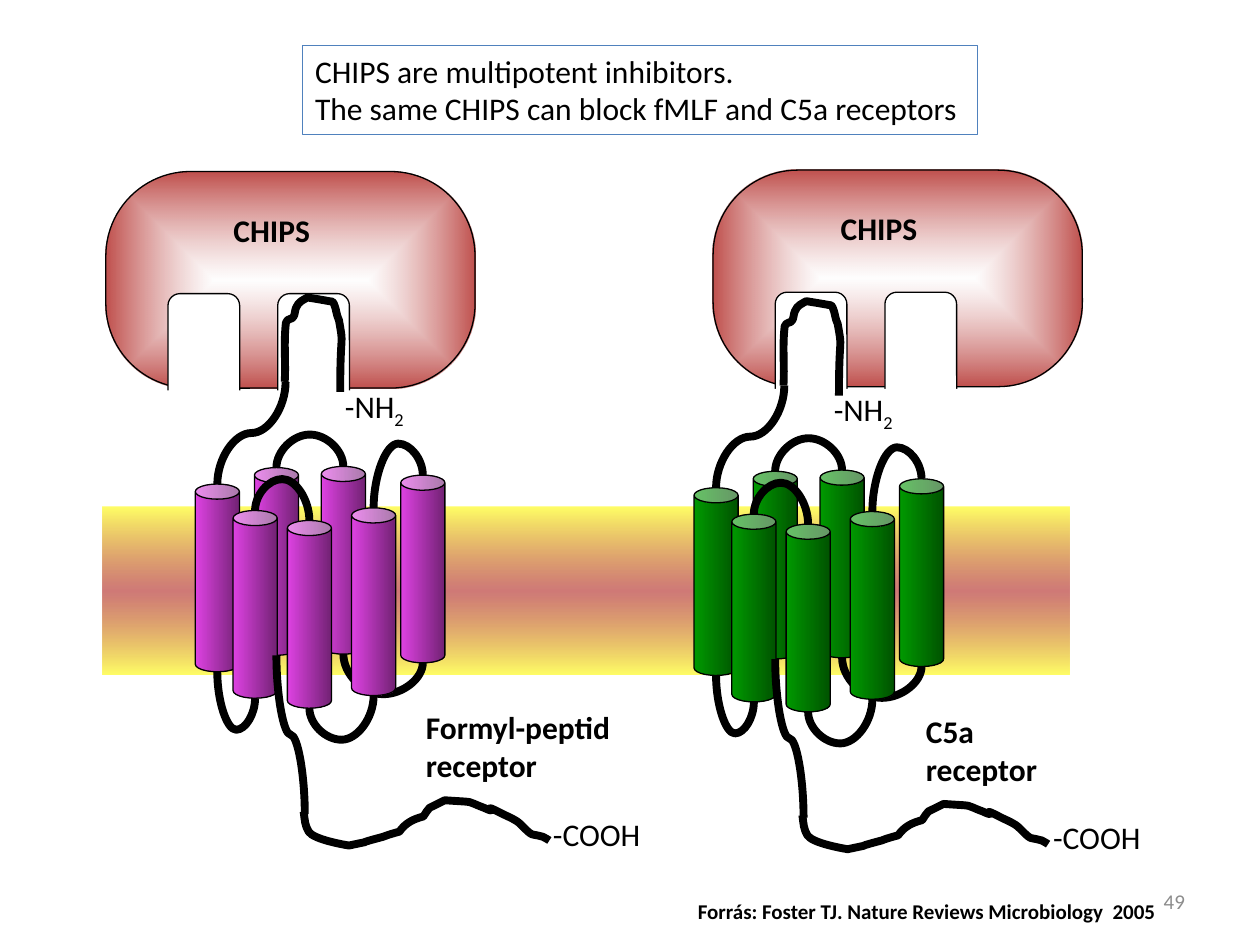
import pptx
import pptx.dml.color
import pptx.enum.shapes
import pptx.enum.text
import pptx.oxml
import pptx.oxml.ns
import pptx.util
from lxml import etree

Pt = pptx.util.Pt
RGBColor = pptx.dml.color.RGBColor
MSO_SHAPE = pptx.enum.shapes.MSO_SHAPE
qn = pptx.oxml.ns.qn

BLACK = RGBColor(0x00, 0x00, 0x00)
WHITE = RGBColor(0xFF, 0xFF, 0xFF)
RED = RGBColor(0xC0, 0x50, 0x4D)
YELLOW = RGBColor(0xFF, 0xFF, 0x66)
FRAME_BLUE = RGBColor(0x4F, 0x81, 0xBD)
NUMBER_GRAY = RGBColor(0x8C, 0x8C, 0x8C)
MAGENTA = (RGBColor(0xDE, 0x42, 0xE2), RGBColor(0x72, 0x22, 0x74))
GREEN = (RGBColor(0x00, 0x99, 0x00), RGBColor(0x00, 0x53, 0x00))

LINEAR = '<a:lin ang="{}" scaled="0"/>'
FROM_CENTRE = ('<a:path path="shape"><a:fillToRect l="50000" t="50000" '
               'r="50000" b="50000"/></a:path>')

HELIX_WIDTH, HELIX_HEIGHT = 25.2, 107.3
HELICES = [(0, 106.6), (72, 96.5), (33.8, 97.2), (21.6, 121.7),
           (52.6, 127.4), (89.3, 120.2), (117.4, 101.5)]
LOOP_RISE = 18

# Bezier outlines: a start point, then three points for each segment
N_TERMINUS = [
    (51.1, 48.2), (51.8, 37.4), (50.4, 25.9), (51.8, 14.4),
    (52.6, 11.5), (55.4, 13), (56.2, 10.8), (56.9, 10.1), (56.9, 7.2), (57.6, 5.8),
    (59, 2.2), (61.9, 1.4), (64.1, 0), (68.4, 0.7), (72.7, 1.4), (77, 2.2),
    (77.8, 2.2), (79.2, 2.2), (79.2, 3.6), (80.6, 6.5), (80.6, 10.1), (82.1, 13),
    (85, 29.5), (82.8, 16.6), (82.8, 54)]
C_TERMINUS = [
    (61.9, 293.8), (62.6, 298.8), (62.6, 301.7), (64.8, 305.3),
    (67.7, 309.6), (83.5, 312.5), (87.8, 313.2), (108, 308.9), (85.7, 313.9), (107.3, 308.2),
    (110.9, 306.7), (116.6, 305.3), (116.6, 305.3), (120.2, 300.2), (124.6, 298.1), (130.3, 296.6),
    (131.8, 294.5), (132.5, 293), (133.9, 291.6), (136.8, 290.2), (142.6, 287.3), (142.6, 287.3),
    (162, 288.7), (153.4, 287.3), (164.9, 291.6), (175.7, 296.6), (160.6, 287.3), (175.7, 295.2),
    (178.6, 296.6), (180.7, 297.4), (182.9, 298.8), (185.8, 300.2), (189.4, 305.3), (192.2, 306.7),
    (194.4, 307.4), (196.6, 307.4), (198.7, 308.2), (200.2, 308.9), (202.3, 310.3), (202.3, 310.3)]


def gradient(shape, stops, direction):
    """Fill with (position %, colour, opacity %) stops."""
    shape.fill.background()
    stop_xml = "".join(
        f'<a:gs pos="{position * 1000}"><a:srgbClr val="{color}">'
        f'<a:alpha val="{opacity * 1000}"/></a:srgbClr></a:gs>'
        for position, color, opacity in stops)
    fill = pptx.oxml.parse_xml(
        '<a:gradFill xmlns:a="http://schemas.openxmlformats.org/drawingml/2006/main" '
        f'rotWithShape="1"><a:gsLst>{stop_xml}</a:gsLst>{direction}</a:gradFill>')
    properties = shape._element.spPr
    properties.replace(properties.find(qn("a:noFill")), fill)


def add_part(slide, preset, left, top, width, height, fill=None, outlined=True, adjust=None):
    part = slide.shapes.add_shape(preset, Pt(left), Pt(top), Pt(width), Pt(height))
    part.shadow.inherit = False
    if adjust is not None:
        part.adjustments[0] = adjust
    if fill is not None:
        part.fill.solid()
        part.fill.fore_color.rgb = fill
    if outlined:
        part.line.color.rgb = BLACK
        part.line.width = Pt(0.75)
    else:
        part.line.fill.background()
    return part


def style(font, size=18, color=BLACK, bold=False):
    font.name = "Calibri"
    font.size = Pt(size)
    font.bold = bold
    font.color.rgb = color


def write(frame, lines, size=18, bold=False):
    """Fill the frame with one paragraph per line and return the last one."""
    frame.word_wrap = False
    for index, line in enumerate(lines):
        paragraph = frame.add_paragraph() if index else frame.paragraphs[0]
        paragraph.alignment = pptx.enum.text.PP_ALIGN.LEFT
        run = paragraph.add_run()
        run.text = line
        style(run.font, size, bold=bold)
    return paragraph


def add_label(slide, left, top, width, height, lines, size=18, bold=False):
    box = slide.shapes.add_textbox(Pt(left), Pt(top), Pt(width), Pt(height))
    box.text_frame.auto_size = pptx.enum.text.MSO_AUTO_SIZE.SHAPE_TO_FIT_TEXT
    return write(box.text_frame, lines, size, bold)


def add_amino_end(slide, left, top):
    subscript = add_label(slide, left, top, 53.3, 28.8, ["-NH"]).add_run()
    subscript.text = "2"
    style(subscript.font)
    subscript._r.get_or_add_rPr().set("baseline", "-25000")


def add_chips(slide, left, top):
    body = add_part(slide, MSO_SHAPE.ROUNDED_RECTANGLE, left, top, 211, 123.8, adjust=0.39)
    gradient(body, [(0, WHITE, 63), (100, RED, 100)], FROM_CENTRE)
    for notch in (35.5, 98.2):
        add_part(slide, MSO_SHAPE.ROUNDED_RECTANGLE, left + notch, top + 69.8, 41, 67.7,
                 WHITE, adjust=0.167)
    add_part(slide, MSO_SHAPE.RECTANGLE, left + 29, top + 125, 156.2, 18, WHITE, outlined=False)
    add_label(slide, left + 65.8, top + 19, 69.8, 28.8, ["CHIPS"], bold=True)


def add_curve(slide, start, end, bend):
    """Curved connector with vertical ends that crosses over at height bend."""
    (x0, y0), (x1, y1) = start, end
    width, height = abs(y1 - y0), abs(x1 - x0)
    left, top = (x0 + x1 - width) / 2, (y0 + y1 - height) / 2
    curve = slide.shapes.add_connector(
        pptx.enum.shapes.MSO_CONNECTOR.CURVE,
        Pt(left), Pt(top), Pt(left + width), Pt(top + height))
    curve.line.color.rgb = BLACK
    curve.line.width = Pt(4.5)
    properties = curve._element.spPr
    etree.SubElement(properties, qn("a:effectLst"))
    frame = properties.find(qn("a:xfrm"))
    frame.set("rot", "16200000")
    if y1 > y0:
        frame.set("flipH", "1")
    if x1 < x0:
        frame.set("flipV", "1")
    adjustments = properties.find(qn("a:prstGeom")).get_or_add_avLst()
    amount = round((bend - y0) / (y1 - y0) * 100000)
    etree.SubElement(adjustments, qn("a:gd"), name="adj1", fmla=f"val {amount}")


def add_strand(slide, left, top, outline):
    points = [(Pt(left + x), Pt(top + y)) for x, y in outline]
    builder = slide.shapes.build_freeform(*points[0], scale=1.0)
    builder.add_line_segments(points[1:], close=False)
    strand = builder.convert_to_shape()
    strand.shadow.inherit = False
    strand.fill.background()
    strand.line.color.rgb = BLACK
    strand.line.width = Pt(4.5)
    segments = list(strand._element.iter(qn("a:lnTo")))
    for first, second, third in zip(segments[::3], segments[1::3], segments[2::3]):
        first.tag = qn("a:cubicBezTo")
        for other in (second, third):
            first.append(other[0])
            other.getparent().remove(other)


def add_receptor(slide, left, top, colors):
    def helix_end(index, bottom):
        x, y = HELICES[index]
        return left + x + HELIX_WIDTH / 2, top + y + (HELIX_HEIGHT if bottom else 0)

    def add_helix(index):
        x, y = HELICES[index]
        helix = add_part(slide, MSO_SHAPE.CAN, left + x, top + y,
                         HELIX_WIDTH, HELIX_HEIGHT, adjust=0.343)
        gradient(helix, [(0, colors[0], 100), (100, colors[1], 100)], LINEAR.format(0))

    def add_loop(first, second, bottom):
        start, end = helix_end(first, bottom), helix_end(second, bottom)
        heights = start[1], end[1]
        bend = max(heights) + LOOP_RISE if bottom else min(heights) - LOOP_RISE
        add_curve(slide, start, end, bend)

    def add_tail(start, end):
        add_curve(slide, start, end, (start[1] + end[1]) / 2)

    add_loop(6, 1, bottom=True)
    for index in range(6):
        add_helix(index)
    add_loop(0, 3, bottom=True)
    add_loop(3, 4, bottom=False)
    add_loop(4, 5, bottom=True)
    add_helix(6)
    add_loop(5, 6, bottom=False)
    add_loop(1, 2, bottom=False)
    add_tail(helix_end(0, bottom=False), (left + 51.6, top + 48.2))
    add_tail(helix_end(2, bottom=True), (left + 62.6, top + 295.2))
    add_strand(slide, left, top, C_TERMINUS)
    add_strand(slide, left, top, N_TERMINUS)


def add_membrane(slide, left, top, width, height):
    membrane = add_part(slide, MSO_SHAPE.RECTANGLE, left, top, width, height, outlined=False)
    gradient(membrane, [(0, YELLOW, 100), (50, RED, 76), (100, YELLOW, 100)],
             LINEAR.format(5400000))


def add_heading(slide, left, top, width, height):
    heading = slide.shapes.title
    heading.left, heading.top, heading.width, heading.height = map(Pt, (left, top, width, height))
    heading.line.color.rgb = FRAME_BLUE
    heading.line.width = Pt(0.75)
    heading.text_frame.vertical_anchor = pptx.enum.text.MSO_ANCHOR.TOP
    heading.text_frame.auto_size = pptx.enum.text.MSO_AUTO_SIZE.NONE
    write(heading.text_frame, ["CHIPS are multipotent inhibitors.",
                               "The same CHIPS can block fMLF and C5a receptors"])


def add_page_number(slide, left, top, width, height):
    box = slide.shapes.add_textbox(Pt(left), Pt(top), Pt(width), Pt(height))
    box.text_frame.word_wrap = True
    box.text_frame.vertical_anchor = pptx.enum.text.MSO_ANCHOR.MIDDLE
    paragraph = box.text_frame.paragraphs[0]
    paragraph.alignment = pptx.enum.text.PP_ALIGN.RIGHT
    run = paragraph.add_run()
    run.text = "49"
    style(run.font, 12, NUMBER_GRAY)


def main():
    deck = pptx.Presentation()
    deck.slide_width, deck.slide_height = Pt(720), Pt(540)
    slide = deck.slides.add_slide(deck.slide_layouts[5])
    add_heading(slide, 172.8, 25.9, 385.9, 51.1)
    add_chips(slide, 407.5, 97.2)
    add_amino_end(slide, 469.4, 219.6)
    add_chips(slide, 60.5, 98)
    add_amino_end(slide, 190, 217.5)
    add_membrane(slide, 58.3, 289.4, 553, 95.8)
    add_receptor(slide, 111.6, 170, MAGENTA)
    add_receptor(slide, 396.6, 172.1, GREEN)
    add_label(slide, 594.7, 463.7, 74.2, 28.8, ["-COOH"])
    add_label(slide, 308.9, 462.2, 74.2, 28.8, ["-COOH"])
    add_label(slide, 522, 403.2, 86.4, 50.4, ["C5a", "receptor"], bold=True)
    add_label(slide, 236.2, 401, 121, 51.1, ["Formyl-peptid", "receptor"], bold=True)
    add_label(slide, 391.7, 509.8, 320.4, 21.6,
              ["Forrás: Foster TJ. Nature Reviews Microbiology  2005"], 12, bold=True)
    add_page_number(slide, 516.2, 500.4, 168, 28.8)
    deck.save("out.pptx")


if __name__ == "__main__":
    main()
